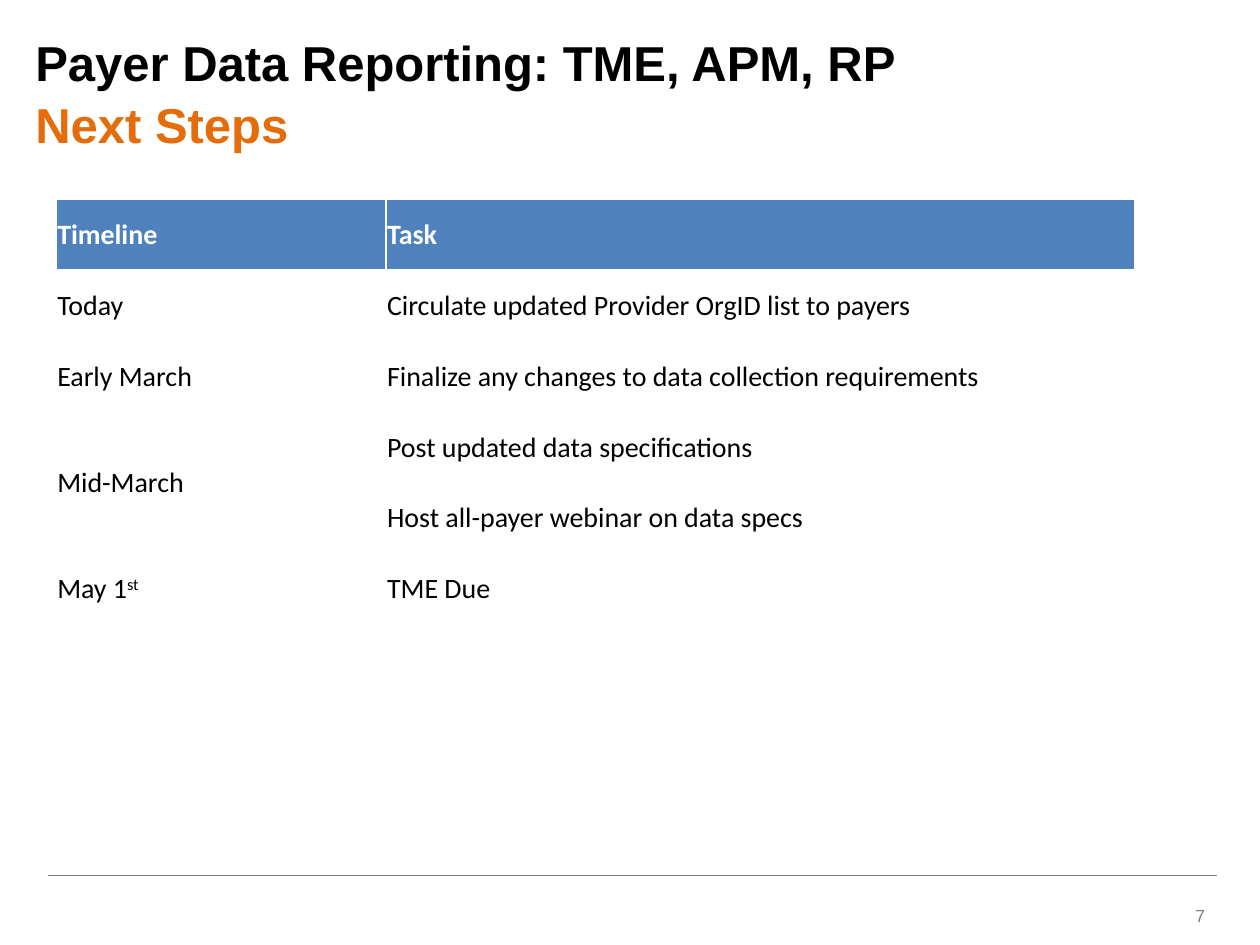
import pptx
import pptx.util
import pptx.dml.color
import pptx.enum.text
import pptx.oxml
import pptx.oxml.ns

Pt = pptx.util.Pt
Align = pptx.enum.text.PP_ALIGN
Anchor = pptx.enum.text.MSO_ANCHOR

COLOURS = {
    "black": "000000", "orange": "E46C0A", "blue": "4F81BD",
    "white": "FFFFFF", "rule": "808080", "number": "7F7F7F",
}
TITLE = [("Payer Data Reporting: TME, APM, RP", "black"), ("Next Steps", "orange")]
HEADER = ("Timeline", "Task")
SCHEDULE = [
    ("Today", "", ["Circulate updated Provider OrgID list to payers"]),
    ("Early March", "", ["Finalize any changes to data collection requirements"]),
    ("Mid-March", "", ["Post updated data specifications", "Host all-payer webinar on data specs"]),
    ("May 1", "st", ["TME Due"]),
]
PAGE_NUMBER = "7"
COLUMN_WIDTHS = (188.5, 427.75)
ROW_HEIGHT = 40.45


def colour(name):
    return pptx.dml.color.RGBColor.from_string(COLOURS[name])


def set_values(target, values):
    for name, value in values.items():
        setattr(target, name, value)


def add_span(para, text, ink, **values):
    span = para.add_run()
    span.text = text
    set_values(span.font, values)
    span.font.color.rgb = colour(ink)
    return span


def add_cell_border(cell, side):
    properties = cell._tc.get_or_add_tcPr()
    properties.append(pptx.oxml.parse_xml(
        f'<a:{side} {pptx.oxml.ns.nsdecls("a")} w="{Pt(1)}"><a:solidFill>'
        f'<a:srgbClr val="{COLOURS["white"]}"/></a:solidFill></a:{side}>'))


def fill_cell(cell, text, fill="white", ink="black", bold=False, suffix=""):
    set_values(cell, {
        "margin_left": Pt(0.75), "margin_right": Pt(0.75),
        "margin_top": Pt(0.75), "margin_bottom": 0,
        "vertical_anchor": Anchor.MIDDLE,
    })
    cell.fill.solid()
    cell.fill.fore_color.rgb = colour(fill)
    font = {"name": "Calibri", "size": Pt(16), "bold": bold}
    para = cell.text_frame.paragraphs[0]
    if text:
        add_span(para, text, ink, **font)
    if suffix:
        span = add_span(para, suffix, ink, **font)
        span.font._element.set("baseline", "30000")


def add_title(page):
    box = page.shapes.title
    set_values(box, {"left": Pt(13), "top": Pt(28), "width": Pt(611.3), "height": Pt(50.4)})
    frame = box.text_frame
    set_values(frame, {
        "vertical_anchor": Anchor.MIDDLE, "word_wrap": True,
        "auto_size": pptx.enum.text.MSO_AUTO_SIZE.NONE,
    })
    for index, (text, ink) in enumerate(TITLE):
        para = frame.add_paragraph() if index else frame.paragraphs[0]
        set_values(para, {"alignment": Align.LEFT, "space_before": Pt(1.5 * index)})
        add_span(para, text, ink, name="Arial", size=Pt(28), bold=True)


def add_schedule(page):
    row_count = 1 + sum(len(tasks) for _, _, tasks in SCHEDULE)
    table = page.shapes.add_table(
        row_count, len(HEADER), Pt(32), Pt(113.9),
        Pt(sum(COLUMN_WIDTHS)), Pt(ROW_HEIGHT * row_count)).table
    set_values(table, {"first_row": False, "horz_banding": False})
    for column, width in zip(table.columns, COLUMN_WIDTHS):
        column.width = Pt(width)
    for row in table.rows:
        row.height = Pt(ROW_HEIGHT)
    for index, text in enumerate(HEADER):
        cell = table.cell(0, index)
        for side in ("lnL", "lnR", "lnT"):
            add_cell_border(cell, side)
        fill_cell(cell, text, "blue", "white", True)
    first = 1
    for when, suffix, tasks in SCHEDULE:
        last = first + len(tasks) - 1
        for index, task in enumerate(tasks, first):
            fill_cell(table.cell(index, 1), task)
        if last > first:
            table.cell(first, 0).merge(table.cell(last, 0))
        fill_cell(table.cell(first, 0), when, suffix=suffix)
        first = last + 1


def add_footer(page):
    rule = page.shapes.add_connector(
        pptx.enum.shapes.MSO_CONNECTOR.STRAIGHT, Pt(27.4), Pt(500.4), Pt(695.5), Pt(500.4))
    rule.line.color.rgb = colour("rule")
    rule.line.width = Pt(0.5)
    rule._element.spPr.append(pptx.oxml.parse_xml(
        f'<a:effectLst {pptx.oxml.ns.nsdecls("a")}/>'))
    box = page.shapes.add_textbox(Pt(527.8), Pt(509), Pt(167.8), Pt(28.8))
    set_values(box.text_frame, {"word_wrap": True, "vertical_anchor": Anchor.MIDDLE})
    para = box.text_frame.paragraphs[0]
    para.alignment = Align.RIGHT
    add_span(para, PAGE_NUMBER, "number", name="Arial", size=Pt(10))


def main():
    deck = pptx.Presentation()
    set_values(deck, {"slide_width": Pt(720), "slide_height": Pt(540)})
    page = deck.slides.add_slide(deck.slide_layouts.get_by_name("Title Only"))
    add_footer(page)
    add_title(page)
    add_schedule(page)
    deck.save("out.pptx")


if __name__ == "__main__":
    main()
